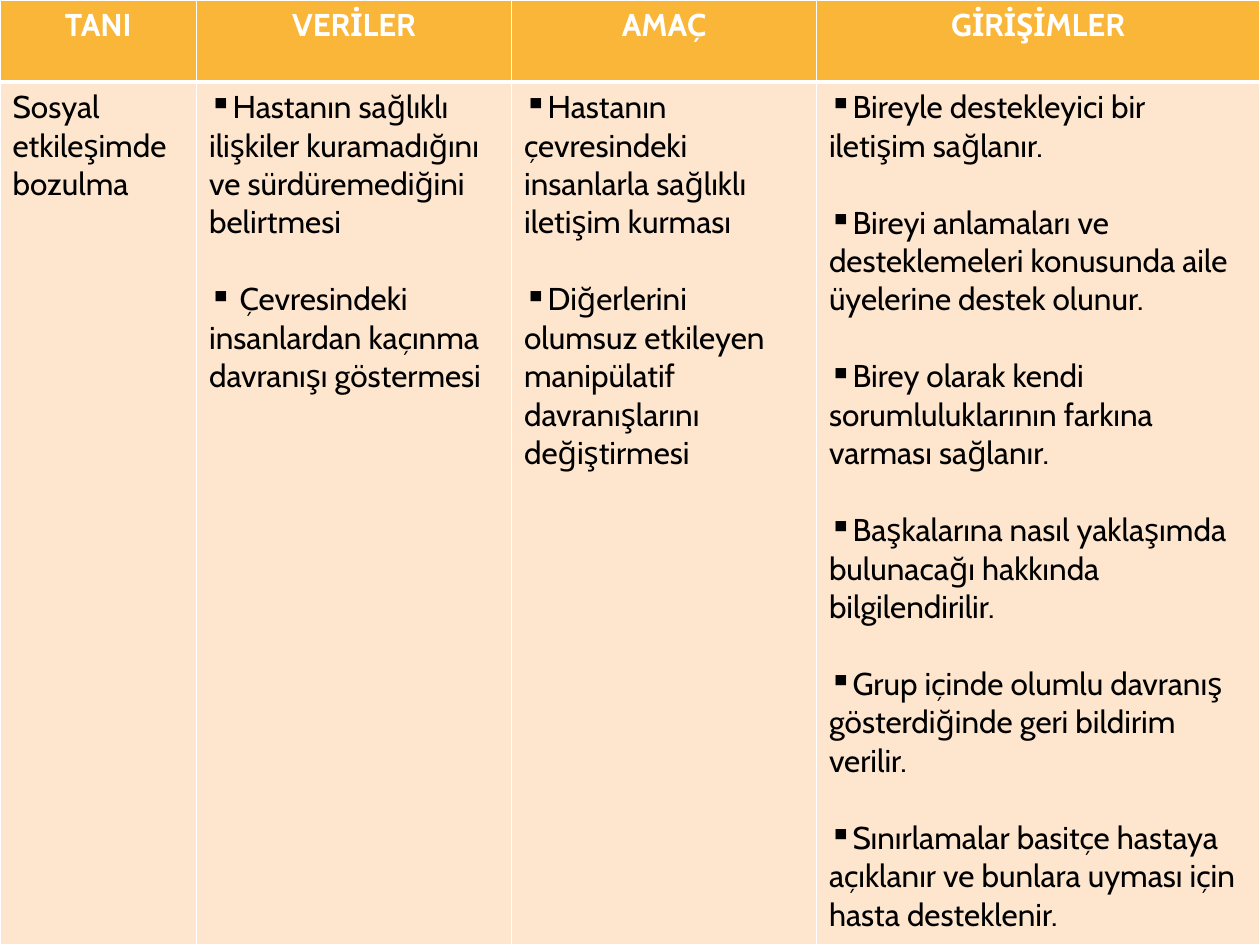
from lxml.etree import SubElement
from pptx import Presentation
from pptx.dml.color import RGBColor
from pptx.enum.text import PP_ALIGN as Align
from pptx.oxml.ns import qn
from pptx.util import Inches, Pt

WHITE = RGBColor(0xFF, 0xFF, 0xFF)
BLACK = RGBColor(0x00, 0x00, 0x00)
ORANGE = RGBColor(0xF9, 0xB6, 0x39)
PEACH = RGBColor(0xFD, 0xE5, 0xCE)
FONT = "Cabin"
TEXT_SIZE = Pt(18)
ITEM_GAP = Pt(22)
THIN, THICK = Pt(1), Pt(3)
COLUMN_WIDTHS = (1.56, 2.5, 2.42, 3.52)
ROW_HEIGHTS = (0.65, 6.85)

HEADINGS = ("TANI", "VERİLER", "AMAÇ", "GİRİŞİMLER")
CARE_PLAN = (
    ("Sosyal etkileşimde bozulma",),
    (
        "Hastanın sağlıklı ilişkiler kuramadığını ve sürdüremediğini belirtmesi",
        " Çevresindeki insanlardan kaçınma davranışı göstermesi",
    ),
    (
        "Hastanın çevresindeki insanlarla sağlıklı iletişim kurması",
        "Diğerlerini olumsuz etkileyen manipülatif davranışlarını değiştirmesi",
    ),
    (
        "Bireyle destekleyici bir iletişim sağlanır.",
        "Bireyi anlamaları ve desteklemeleri konusunda aile üyelerine destek olunur.",
        "Birey olarak kendi sorumluluklarının farkına varması sağlanır.",
        "Başkalarına nasıl yaklaşımda bulunacağı hakkında bilgilendirilir.",
        "Grup içinde olumlu davranış gösterdiğinde geri bildirim verilir.",
        "Sınırlamalar basitçe hastaya açıklanır ve bunlara uyması için hasta desteklenir.",
    ),
)


def style_cell(cell, color, top, bottom):
    """Give a cell its white borders and its fill."""
    properties = cell._tc.get_or_add_tcPr()
    for side, width in (("L", THIN), ("R", THIN), ("T", top), ("B", bottom)):
        line = SubElement(properties, qn(f"a:ln{side}"), w=str(int(width)))
        SubElement(SubElement(line, qn("a:solidFill")), qn("a:srgbClr"), val=str(WHITE))
    cell.fill.solid()
    cell.fill.fore_color.rgb = color


def add_span(para, text, color, bold):
    """Add one formatted run to a paragraph."""
    span = para.add_run()
    span.text = text
    span.font.name = FONT
    span.font.size = TEXT_SIZE
    span.font.bold = bold
    span.font.color.rgb = color


def add_bullet(para):
    """Put a small square directly before the paragraph."""
    properties = para._p.get_or_add_pPr()
    properties.set("marL", "0")
    properties.set("indent", "0")
    SubElement(properties, qn("a:buChar"), char="▪")


def fill_heading(cell, text):
    """Write a centred column heading."""
    style_cell(cell, ORANGE, THIN, THICK)
    para = cell.text_frame.paragraphs[0]
    para.alignment = Align.CENTER
    add_span(para, text, WHITE, True)


def fill_items(cell, items, bulleted):
    """Write the paragraphs of a body cell."""
    style_cell(cell, PEACH, THICK, THIN)
    frame = cell.text_frame
    for index, text in enumerate(items):
        para = frame.add_paragraph() if index else frame.paragraphs[0]
        if bulleted:
            add_bullet(para)
        if index:
            para.space_before = ITEM_GAP
        add_span(para, text, BLACK, False)


def add_care_plan(page, left, top, width, height):
    """Place the care plan table in the given box."""
    table = page.shapes.add_table(
        len(ROW_HEIGHTS), len(COLUMN_WIDTHS), left, top, width, height
    ).table
    for column, share in zip(table.columns, COLUMN_WIDTHS):
        column.width = int(width * share / sum(COLUMN_WIDTHS))
    for row, share in zip(table.rows, ROW_HEIGHTS):
        row.height = int(height * share / sum(ROW_HEIGHTS))
    for index, (heading, items) in enumerate(zip(HEADINGS, CARE_PLAN)):
        fill_heading(table.cell(0, index), heading)
        fill_items(table.cell(1, index), items, bulleted=index > 0)


def main():
    """Build and save the deck."""
    deck = Presentation()
    deck.slide_width, deck.slide_height = Inches(10), Inches(7.5)
    page = deck.slides.add_slide(deck.slide_layouts[6])
    add_care_plan(page, Inches(0), Inches(0), deck.slide_width, deck.slide_height)
    deck.save("out.pptx")


if __name__ == "__main__":
    main()
